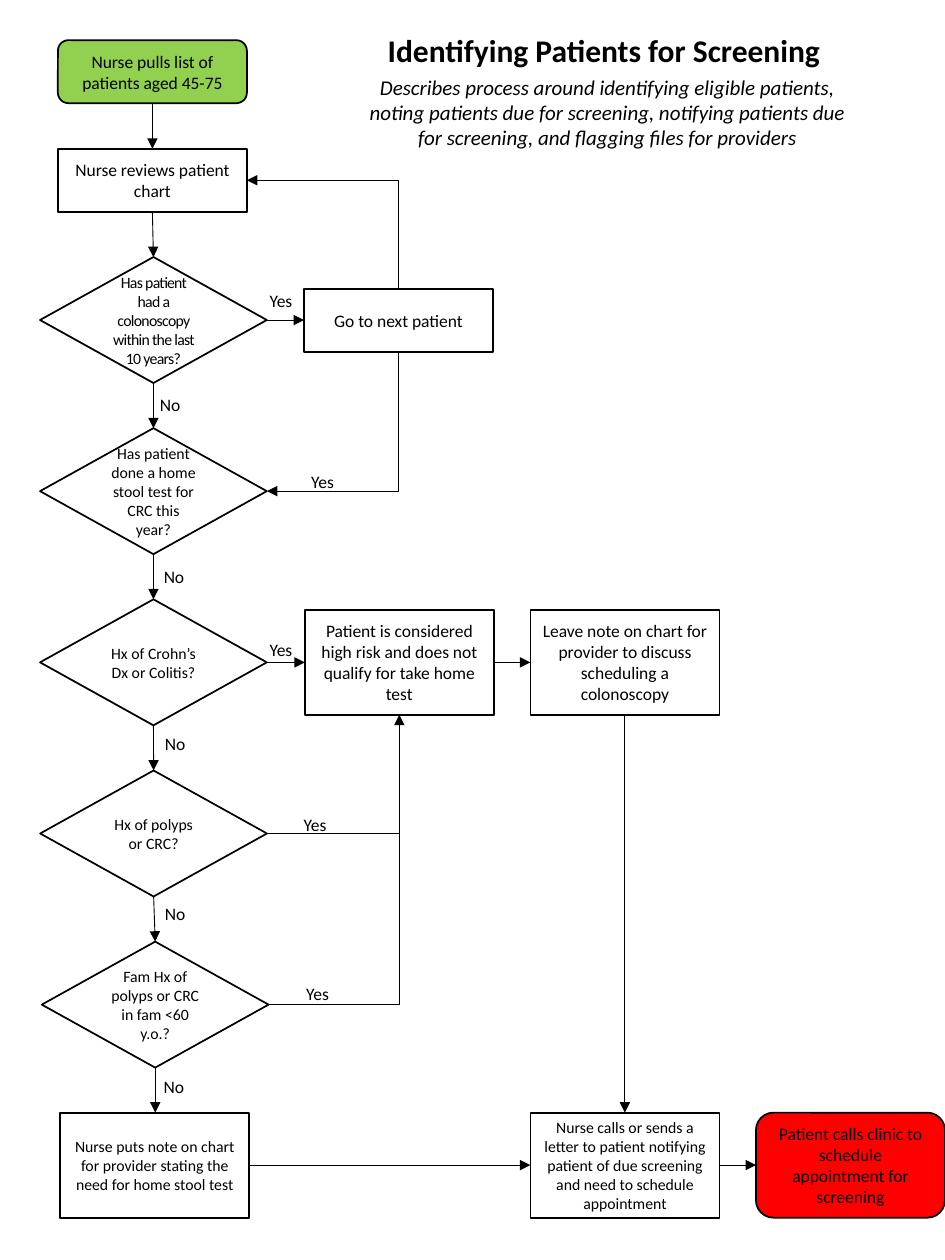
"""Build a one-page flowchart for identifying patients for screening."""
from dataclasses import dataclass

from lxml.etree import SubElement
from pptx import Presentation
from pptx.dml.color import RGBColor
from pptx.enum.shapes import MSO_CONNECTOR, MSO_SHAPE
from pptx.enum.text import MSO_ANCHOR, MSO_AUTO_SIZE, PP_ALIGN
from pptx.oxml.ns import qn
from pptx.util import Pt


@dataclass(frozen=True)
class Theme:
    font: str = "Calibri"
    ink: RGBColor = RGBColor(0, 0, 0)
    start: RGBColor = RGBColor(0x92, 0xD0, 0x50)
    stop: RGBColor = RGBColor(0xFF, 0, 0)
    title: float = 18
    lead: float = 12
    body: float = 10
    small: float = 9
    edge: float = 1
    wire: float = 0.5


theme = Theme()
deck = Presentation()
deck.slide_width, deck.slide_height = Pt(540), Pt(720)
slide = deck.slides.add_slide(deck.slide_layouts[6])
shapes = slide.shapes


def write(shape, text, size):
    """Put centred, wrapped text in a shape and return its font."""
    frame = shape.text_frame
    frame.text = text
    frame.word_wrap = True
    para = frame.paragraphs[0]
    para.alignment = PP_ALIGN.CENTER
    font = para.runs[0].font
    font.name, font.size = theme.font, Pt(size)
    font.color.rgb = theme.ink
    return font


def join(x1, y1, x2, y2, tip="tailEnd"):
    """Draw a straight wire, or one that runs across and then up or down."""
    bent = abs(x2 - x1) > 2 and abs(y2 - y1) > 2
    kind = MSO_CONNECTOR.ELBOW if bent else MSO_CONNECTOR.STRAIGHT
    wire = shapes.add_connector(kind, Pt(x1), Pt(y1), Pt(x2), Pt(y2))
    wire.line.width = Pt(theme.wire)
    wire.line.color.rgb = theme.ink
    props = wire._element.spPr
    if bent:
        props.find(qn("a:prstGeom")).set("prst", "bentConnector2")
    if tip:
        SubElement(props.find(qn("a:ln")), qn(f"a:{tip}"), type="triangle")
    SubElement(props, qn("a:effectLst"))


wide, low, tall = 108, 36, 60
left, mid, right, far = 33.1, 174.2, 303.1, 432
risk, base = 348.5, 635.8
span, rise, top, step = 129.6, 72, 146.9, 97.8
rows = [top + step * i for i in range(5)]
sides = [22.9, 22.9, 22.9, 23, 23.9]

heads = [
    (174.2, 14.4, 342, 28.8, "Identifying Patients for Screening", theme.title),
    (203.8, 38.9, 286.6, 51.1,
     "Describes process around identifying eligible patients, noting patients "
     "due for screening, notifying patients due for screening, and flagging "
     "files for providers", theme.lead),
]
marks = [(141.1, 162, "Yes"), (164.9, 265.7, "Yes"), (141.1, 361.4, "Yes"),
         (160.6, 461.5, "Yes"), (162, 558, "Yes"), (77.8, 221.8, "No"),
         (80, 319.7, "No"), (80.6, 415.4, "No"), (80.6, 512.6, "No"),
         (79.9, 611.3, "No")]
notes = heads + [(x, y, 38.9, 19.4, text, theme.body) for x, y, text in marks]

box, pill = MSO_SHAPE.FLOWCHART_PROCESS, MSO_SHAPE.ROUNDED_RECTANGLE
gem = MSO_SHAPE.FLOWCHART_DECISION
steps = [
    (pill, left, 23, low, "Nurse pulls list of patients aged 45-75",
     theme.body, theme.start),
    (box, left, 85, low, "Nurse reviews patient chart", theme.body, None),
    (box, 173.7, 165, low, "Go to next patient", theme.body, None),
    (box, mid, risk, tall, "Patient is considered high risk and does not "
     "qualify for take home test", theme.body, None),
    (box, right, risk, tall, "Leave note on chart for provider to discuss "
     "scheduling a colonoscopy", theme.body, None),
    (box, 34.4, base, tall, "Nurse puts note on chart for provider stating "
     "the need for home stool test", theme.small, None),
    (box, right, base, tall, "Nurse calls or sends a letter to patient "
     "notifying patient of due screening and need to schedule appointment",
     theme.small, None),
    (pill, far, base, tall, "Patient calls clinic to schedule appointment "
     "for screening", theme.body, theme.stop),
]
asks = ["Has patient had a colonoscopy within the last 10 years?",
        "Has patient done a home stool test for CRC this year?",
        "Hx of Crohn’s Dx or Colitis?",
        "Hx of polyps or CRC?",
        "Fam Hx of polyps or CRC in fam <60 y.o.?"]
nodes = [(kind, x, y, wide, *rest) for kind, x, y, *rest in steps]
nodes += [(gem, x, y, span, rise, text, theme.small, None)
          for x, y, text in zip(sides, rows, asks)]

for x, y, w, h, text, size in notes:
    note = shapes.add_textbox(Pt(x), Pt(y), Pt(w), Pt(h))
    font = write(note, text, size)
    font.bold = size == theme.title
    font.italic = size == theme.lead
    note.text_frame.auto_size = MSO_AUTO_SIZE.SHAPE_TO_FIT_TEXT

for kind, x, y, w, h, text, size, fill in nodes:
    node = shapes.add_shape(kind, Pt(x), Pt(y), Pt(w), Pt(h))
    node.shadow.inherit = False
    if fill:
        node.fill.solid()
        node.fill.fore_color.rgb = fill
    else:
        node.fill.background()
    node.line.width = Pt(theme.edge)
    node.line.color.rgb = theme.ink
    write(node, text, size)
    node.text_frame.vertical_anchor = MSO_ANCHOR.MIDDLE
    if text == asks[0]:
        run = node.text_frame.paragraphs[0].runs[0]
        run._r.get_or_add_rPr().set("spc", "-40")

axis = [x + span / 2 for x in sides]
join(87.1, 59, 87.1, 85)
join(87.1, 121, axis[0], top)
for i, y in enumerate(rows):
    last = i == len(rows) - 1
    join(axis[i], y + rise, axis[i] if last else axis[i + 1],
         base if last else rows[i + 1])

ends = [x + span for x in sides]
cores = [y + rise / 2 for y in rows]
join(left + wide, 103, 227.7, 165, "headEnd")
join(ends[0], cores[0], 173.7, cores[0])
join(ends[1], cores[1], 227.7, 201, "headEnd")
join(ends[2], cores[2], mid, cores[2])
join(mid + wide, cores[2], right, cores[2])
join(ends[3], cores[3], mid + wide / 2, risk + tall)
join(ends[4], cores[4], mid + wide / 2, 470.2, None)

join(right + wide / 2, risk + tall, right + wide / 2, base)
join(34.4 + wide, base + tall / 2, right, base + tall / 2)
join(right + wide, base + tall / 2, far, base + tall / 2)

deck.save("out.pptx")
